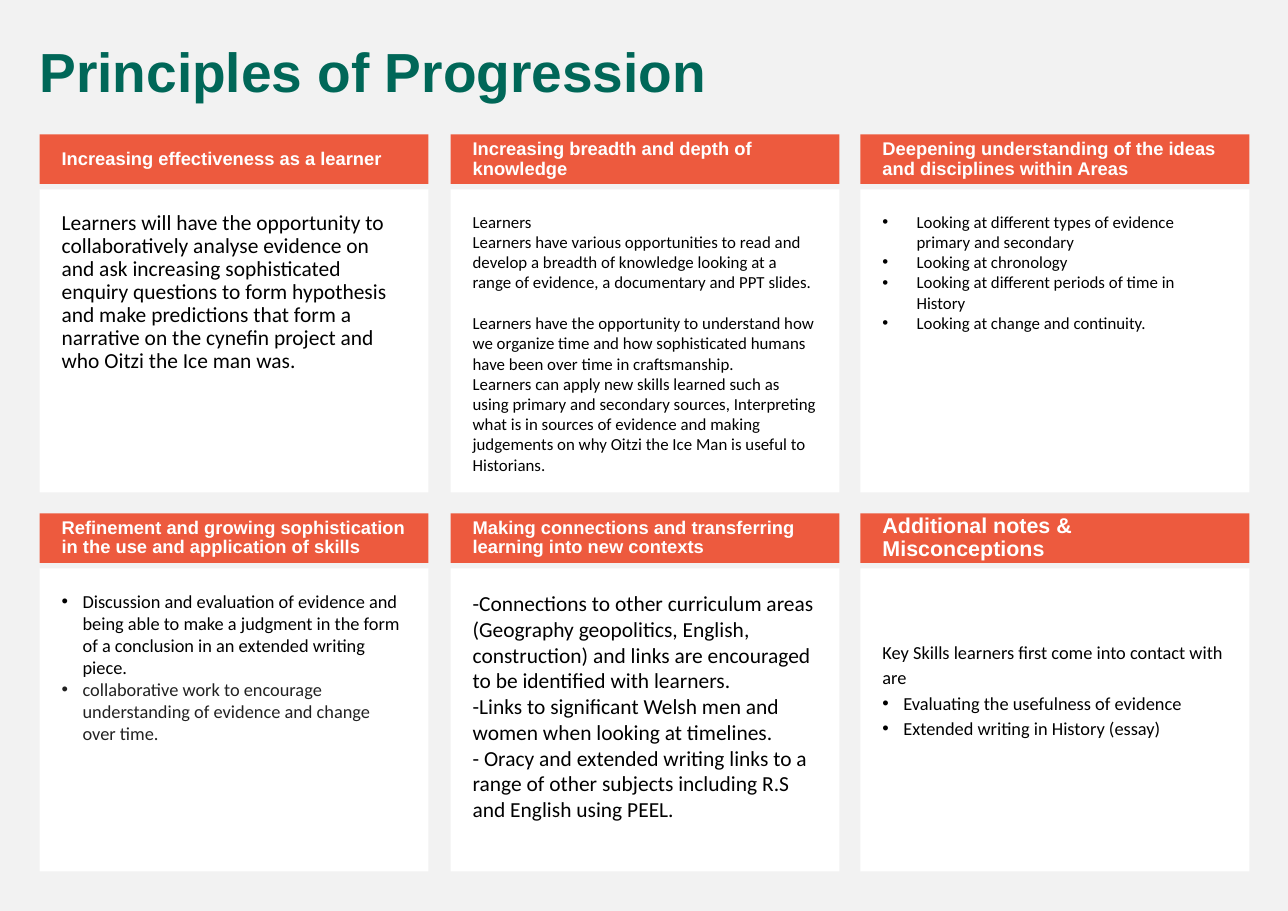
"""Build the Principles of Progression slide: six headed cards in a grid."""
from dataclasses import dataclass
from typing import Optional

from lxml.etree import SubElement
from pptx import Presentation
from pptx.dml.color import RGBColor
from pptx.enum.shapes import MSO_SHAPE as Preset
from pptx.enum.text import MSO_ANCHOR as Anchor, PP_ALIGN as Align
from pptx.oxml.ns import qn
from pptx.util import Emu, Pt

PX = 9144
PAGE_WIDTH, PAGE_HEIGHT = 1169, 827
COLUMNS = (36, 409, 781)
ROWS = (122, 466)
CARD_WIDTH, HEADING_HEIGHT, BODY_HEIGHT = 353, 45, 275
BODY_OFFSET = 50

BACKGROUND = RGBColor(0xF2, 0xF2, 0xF2)
GREEN = RGBColor(0x00, 0x67, 0x58)
ORANGE = RGBColor(0xED, 0x5A, 0x3E)
WHITE = RGBColor(0xFF, 0xFF, 0xFF)
BLACK = RGBColor(0x00, 0x00, 0x00)
CHARCOAL = RGBColor(0x22, 0x22, 0x22)


@dataclass(frozen=True)
class Line:
    text: str
    size: int
    color: RGBColor = BLACK
    font: str = "Calibri"
    bold: bool = False
    indent: int = 0
    spacing: Optional[float] = None
    before: float = 0


@dataclass(frozen=True)
class Card:
    heading: str
    lines: tuple[Line, ...]
    heading_size: int = 12
    top_inset: int = 20


CARDS = (
    Card("Increasing effectiveness as a learner", (
        Line("Learners will have the opportunity to collaboratively analyse evidence on "
             "and ask increasing sophisticated enquiry questions to form hypothesis and "
             "make predictions that form a narrative on the cynefin project and "
             "who Oitzi the Ice man was.", 14, spacing=0.9),
    )),
    Card("Increasing breadth and depth of knowledge", (
        Line("Learners", 11),
        Line("Learners have various opportunities to read and develop a breadth of "
             "knowledge looking at a range of evidence, a documentary and PPT slides.", 11),
        Line("Learners have the opportunity to understand how we organize time and how "
             "sophisticated humans have been over time in craftsmanship.", 11, before=13.4),
        Line("Learners can apply new skills learned such as using primary and secondary "
             "sources, Interpreting what is in sources of evidence and making judgements "
             "on why Oitzi the Ice Man is useful to Historians.", 11),
    )),
    Card("Deepening understanding of the ideas and disciplines within Areas", (
        Line("Looking at different types of evidence primary and secondary", 11, indent=31),
        Line("Looking at chronology", 11, indent=31),
        Line("Looking at different periods of time in History", 11, indent=31),
        Line("Looking at change and continuity.", 11, indent=31),
    )),
    Card("Refinement and growing sophistication in the use and application of skills", (
        Line("Discussion and evaluation of evidence and being able to make a judgment in "
             "the form of a conclusion in an extended writing piece.", 12, indent=19),
        Line("collaborative work to encourage understanding of evidence and change over "
             "time.", 12, CHARCOAL, indent=19),
    )),
    Card("Making connections and transferring learning into new contexts", (
        Line("-Connections to other curriculum areas (Geography geopolitics, English, "
             "construction) and links are encouraged to be identified with learners.", 14),
        Line("-Links to significant Welsh men and women when looking at timelines.", 14),
        Line("- Oracy and extended writing links to a range of other subjects including "
             "R.S and English using PEEL.", 14),
    )),
    Card("Additional notes & Misconceptions", (
        Line("Key Skills learners first come into contact with are", 12, spacing=1.15),
        Line("Evaluating the usefulness of evidence", 12, indent=19, spacing=1.15),
        Line("Extended writing in History (essay)", 12, indent=19, spacing=1.15),
    ), heading_size=14, top_inset=63),
)


def px(length: int) -> Emu:
    """Turn px into EMU."""
    return Emu(length * PX)


def write(frame, lines: tuple[Line, ...], insets: tuple[int, int, int, int]) -> None:
    """Fill a text frame with lines, given left, top, right and bottom insets."""
    frame.word_wrap = True
    frame.margin_left, frame.margin_top, frame.margin_right, frame.margin_bottom = map(px, insets)
    for index, line in enumerate(lines):
        paragraph = frame.add_paragraph() if index else frame.paragraphs[0]
        paragraph.text = line.text
        if line.indent:
            properties = paragraph._p.get_or_add_pPr()
            properties.set("marL", str(px(line.indent)))
            properties.set("indent", str(-px(line.indent)))
            SubElement(properties, qn("a:buFont"), typeface="Arial")
            SubElement(properties, qn("a:buChar"), char="•")
        paragraph.alignment = Align.LEFT
        paragraph.space_before = Pt(line.before)
        if line.spacing:
            paragraph.line_spacing = line.spacing
        font = paragraph.font
        font.name, font.size, font.bold = line.font, Pt(line.size), line.bold
        font.color.rgb = line.color


def add_panel(slide, left: int, top: int, height: int, color: RGBColor, anchor: Anchor):
    """Add a plain rectangle of card width and return its text frame."""
    panel = slide.shapes.add_shape(Preset.RECTANGLE, px(left), px(top), px(CARD_WIDTH), px(height))
    panel.shadow.inherit = False
    panel.fill.solid()
    panel.fill.fore_color.rgb = color
    panel.line.fill.background()
    panel.text_frame.vertical_anchor = anchor
    return panel.text_frame


def add_card(slide, card: Card, left: int, top: int) -> None:
    """Add a card's body and the heading above it."""
    body = add_panel(slide, left, top + BODY_OFFSET, BODY_HEIGHT, WHITE, Anchor.TOP)
    write(body, card.lines, (20, card.top_inset, 20, 20))
    heading = add_panel(slide, left, top, HEADING_HEIGHT, ORANGE, Anchor.MIDDLE)
    write(heading, (Line(card.heading, card.heading_size, WHITE, "Arial", True, spacing=0.9),),
          (20, 5, 10, 5))


def main() -> None:
    """Build and save the slide."""
    deck = Presentation()
    deck.slide_width, deck.slide_height = px(PAGE_WIDTH), px(PAGE_HEIGHT)
    slide = deck.slides.add_slide(deck.slide_layouts[6])
    slide.background.fill.solid()
    slide.background.fill.fore_color.rgb = BACKGROUND

    title = slide.shapes.add_textbox(px(26), px(36), px(1108), px(65))
    write(title.text_frame,
          (Line("Principles of Progression", 36, GREEN, "Arial", True, spacing=0.9),),
          (10, 5, 10, 5))
    for index, card in enumerate(CARDS):
        row, column = divmod(index, len(COLUMNS))
        add_card(slide, card, COLUMNS[column], ROWS[row])
    deck.save("out.pptx")


if __name__ == "__main__":
    main()
